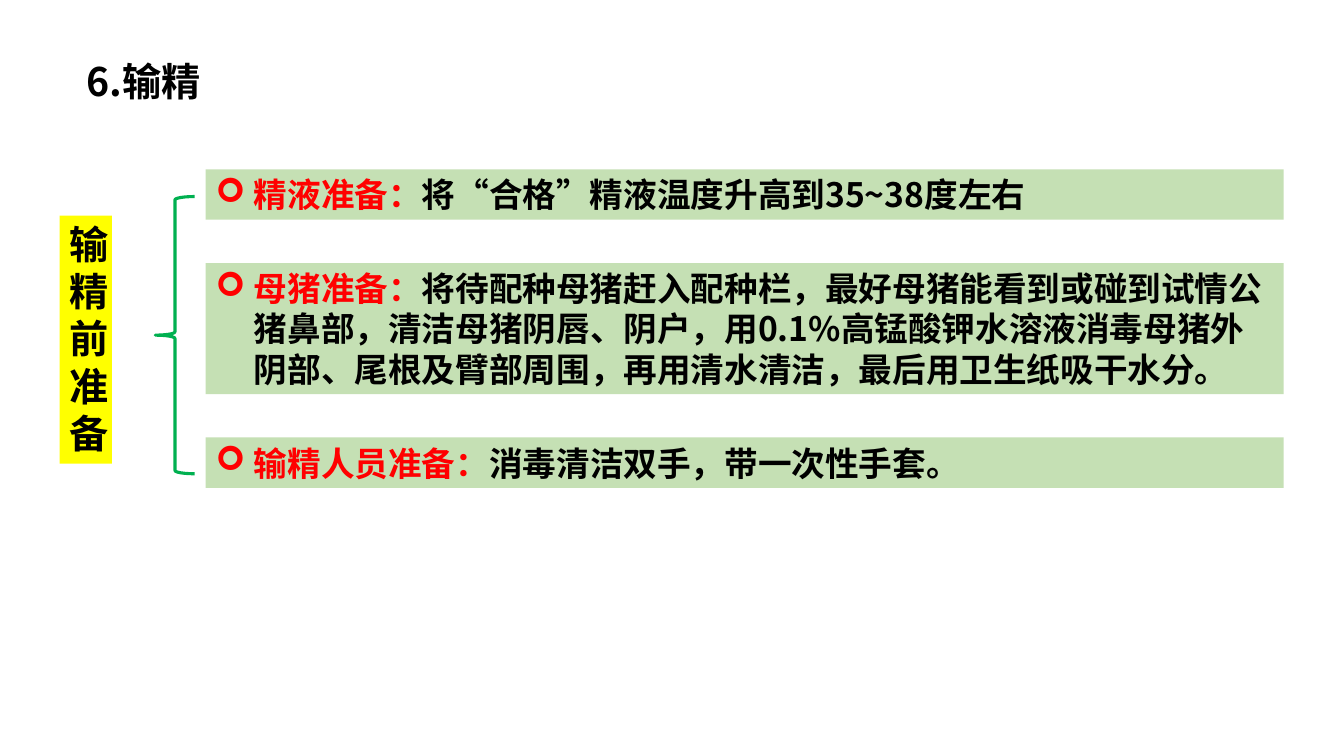
"""Build the slide on preparing for insemination."""
from dataclasses import dataclass

from lxml.etree import SubElement
from pptx import Presentation
from pptx.dml.color import RGBColor
from pptx.enum.shapes import MSO_SHAPE as Shape
from pptx.enum.text import MSO_ANCHOR as Anchor, PP_ALIGN as Align
from pptx.oxml.ns import qn
from pptx.util import Inches, Pt

TITLE = "6.输精"
STAGE = "输精前准备"
STEPS = [
    ("精液准备：", "将“合格”精液温度升高到35~38度左右", 1),
    ("母猪准备：", "将待配种母猪赶入配种栏，最好母猪能看到或碰到试情公猪鼻部，"
     "清洁母猪阴唇、阴户，用0.1%高锰酸钾水溶液消毒母猪外阴部、尾根及臂部周围，"
     "再用清水清洁，最后用卫生纸吸干水分。", 3),
    ("输精人员准备：", "消毒清洁双手，带一次性手套。", 1),
]


@dataclass(frozen=True)
class Theme:
    """Colours, font and type sizes of the slide."""
    font: str = "Noto Sans CJK SC"
    heading: int = 28
    body: int = 24
    text: str = "000000"
    accent: str = "FF0000"
    stage: str = "FFFF00"
    step: str = "C5E0B4"
    brace: str = "00B050"


THEME = Theme()
WIDTH, HEIGHT = 13.33, 7.5
STEP_LEFT, STEP_TOP, STEP_WIDTH = 2.04, 1.68, 10.69
LINE_HEIGHT, PADDING, STEP_GAP = 0.4, 0.1, 0.43
INDENT = 0.38


def add_text(paragraph, text, size=THEME.body, color=THEME.text):
    """Add one bold run to a paragraph."""
    run = paragraph.add_run()
    run.text = text
    font = run.font
    font.size, font.bold, font.name = Pt(size), True, THEME.font
    font.color.rgb = RGBColor.from_string(color)
    SubElement(font._element, qn("a:ea"), typeface=THEME.font)


def add_shape(slide, kind, box, fill=None):
    """Add a flat preset shape with top-left text."""
    shape = slide.shapes.add_shape(kind, *map(Inches, box))
    shape.shadow.inherit = False
    shape.line.fill.background()
    if fill:
        shape.fill.solid()
        shape.fill.fore_color.rgb = RGBColor.from_string(fill)
    else:
        shape.fill.background()
    shape.text_frame.word_wrap = True
    shape.text_frame.vertical_anchor = Anchor.TOP
    shape.text_frame.paragraphs[0].alignment = Align.LEFT
    return shape


def add_bullet(paragraph):
    """Give a paragraph an arrow bullet with a hanging indent."""
    properties = paragraph._p.get_or_add_pPr()
    properties.set("marL", str(Inches(INDENT)))
    properties.set("indent", str(-Inches(INDENT)))
    SubElement(properties, qn("a:buFont"), typeface="Wingdings")
    SubElement(properties, qn("a:buChar"), char="➢")


def add_title(slide):
    title = slide.shapes.title
    title.left, title.top, title.width, title.height = map(Inches, (0.76, 0.57, 3, 0.58))
    frame = title.text_frame
    frame.vertical_anchor = Anchor.TOP
    paragraph = frame.paragraphs[0]
    paragraph.alignment = Align.LEFT
    paragraph.line_spacing = 0.9
    add_text(paragraph, TITLE, size=THEME.heading)


def add_stage(slide):
    frame = add_shape(slide, Shape.RECTANGLE, (0.59, 2.14, 0.52, 2.46), THEME.stage).text_frame
    for index, character in enumerate(STAGE):
        paragraph = frame.add_paragraph() if index else frame.paragraphs[0]
        paragraph.alignment = Align.LEFT
        add_text(paragraph, character, size=THEME.heading)


def add_steps(slide):
    top = STEP_TOP
    for label, detail, lines in STEPS:
        height = lines * LINE_HEIGHT + PADDING
        shape = add_shape(slide, Shape.RECTANGLE, (STEP_LEFT, top, STEP_WIDTH, height), THEME.step)
        paragraph = shape.text_frame.paragraphs[0]
        add_bullet(paragraph)
        add_text(paragraph, label, color=THEME.accent)
        add_text(paragraph, detail)
        top += height + STEP_GAP


def add_brace(slide):
    brace = add_shape(slide, Shape.LEFT_BRACE, (1.54, 1.95, 0.39, 2.75))
    brace.line.color.rgb = RGBColor.from_string(THEME.brace)
    brace.line.width = Pt(2.25)


def main():
    presentation = Presentation()
    presentation.slide_width, presentation.slide_height = Inches(WIDTH), Inches(HEIGHT)
    slide = presentation.slides.add_slide(presentation.slide_layouts[5])
    add_title(slide)
    add_stage(slide)
    add_steps(slide)
    add_brace(slide)
    presentation.save("out.pptx")


if __name__ == "__main__":
    main()
